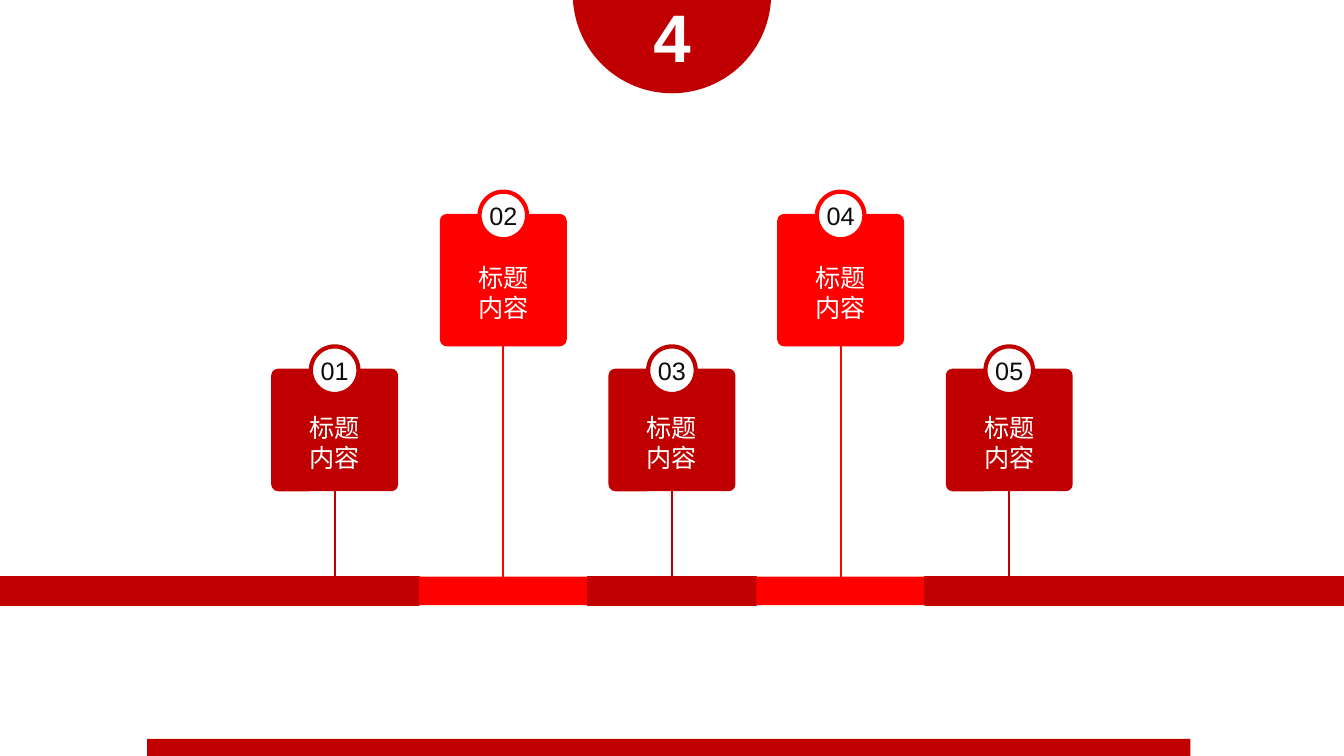
from dataclasses import dataclass

from lxml.etree import SubElement
from pptx import Presentation
from pptx.dml.color import RGBColor
from pptx.enum.shapes import MSO_CONNECTOR, MSO_SHAPE
from pptx.enum.text import MSO_ANCHOR, PP_ALIGN
from pptx.oxml.ns import qn
from pptx.util import Cm, Pt


@dataclass(frozen=True)
class Theme:
    dark_red: RGBColor = RGBColor(0xC0, 0x00, 0x00)
    bright_red: RGBColor = RGBColor(0xFF, 0x00, 0x00)
    white: RGBColor = RGBColor(0xFF, 0xFF, 0xFF)
    ink: RGBColor = RGBColor(0x0D, 0x0D, 0x0D)
    latin_font: str = "Arial"
    chinese_font: str = "Noto Sans CJK SC"
    body_size: Pt = Pt(18)
    chapter_size: Pt = Pt(48)
    ring_width: Pt = Pt(3)
    stem_width: Pt = Pt(1.5)
    bar_line_width: Pt = Pt(1)


THEME = Theme()

# Timeline geometry in centimetres
SLIDE_WIDTH, SLIDE_HEIGHT = 33.87, 19.05
CENTER = SLIDE_WIDTH / 2
PITCH = 4.25
BAR_TOP, BAR_HEIGHT = 14.53, 0.72
CARD_WIDTH, BADGE_SIZE = 3.2, 1.2
LABEL_WIDTH, LABEL_HEIGHT = 2.14, 1.8


@dataclass(frozen=True)
class Level:
    color: RGBColor
    card_top: float
    card_height: float
    label_top: float


LOW = Level(THEME.dark_red, 9.29, 3.09, 10.26)
HIGH = Level(THEME.bright_red, 5.39, 3.34, 6.48)
STEPS = [("01", LOW), ("02", HIGH), ("03", LOW), ("04", HIGH), ("05", LOW)]


def apply_format(target, values):
    for name, value in values.items():
        setattr(target, name, value)


def add_figure(slide, kind, left, top, width, height, fill, line=None, line_width=None):
    shape = slide.shapes.add_shape(kind, Cm(left), Cm(top), Cm(width), Cm(height))
    shape.shadow.inherit = False
    shape.fill.solid()
    shape.fill.fore_color.rgb = fill
    if line is None:
        shape.line.fill.background()
    else:
        shape.line.color.rgb = line
        shape.line.width = line_width
    return shape


def write_text(shape, text, color, frame_format, font_format):
    apply_format(shape.text_frame, frame_format)
    paragraph = shape.text_frame.paragraphs[0]
    paragraph.alignment = PP_ALIGN.CENTER
    run = paragraph.add_run()
    run.text = text
    run.font.color.rgb = color
    apply_format(run.font, font_format)
    east_asian = SubElement(run.font._element, qn("a:ea"))
    east_asian.set("typeface", font_format["name"])


def add_label(slide, text, left, top, width, height, font_format, wrap=True):
    box = slide.shapes.add_textbox(Cm(left), Cm(top), Cm(width), Cm(height))
    write_text(box, text, THEME.white, {"word_wrap": wrap}, font_format)


def add_stem(slide, center, top, color):
    stem = slide.shapes.add_connector(
        MSO_CONNECTOR.STRAIGHT, Cm(center), Cm(top), Cm(center), Cm(BAR_TOP))
    stem.line.color.rgb = color
    stem.line.width = THEME.stem_width
    SubElement(stem._element.spPr, qn("a:effectLst"))


def add_bar_segment(slide, left, right, color):
    outline = color if color == THEME.dark_red else None
    add_figure(slide, MSO_SHAPE.RECTANGLE, left, BAR_TOP, right - left, BAR_HEIGHT,
               color, outline, THEME.bar_line_width)


def add_step(slide, number, center, level):
    # Card and stem
    card = add_figure(slide, MSO_SHAPE.ROUNDED_RECTANGLE, center - CARD_WIDTH / 2,
                      level.card_top, CARD_WIDTH, level.card_height, level.color)
    card.adjustments[0] = 0.056
    add_stem(slide, center, level.card_top + level.card_height, level.color)

    # Numbered badge
    badge = add_figure(slide, MSO_SHAPE.OVAL, center - BADGE_SIZE / 2,
                       level.card_top - 0.56, BADGE_SIZE, BADGE_SIZE,
                       THEME.white, level.color, THEME.ring_width)
    margins = {f"margin_{side}": 0 for side in ("left", "top", "right", "bottom")}
    write_text(badge, number, THEME.ink,
               {**margins, "vertical_anchor": MSO_ANCHOR.MIDDLE},
               {"name": THEME.latin_font, "size": THEME.body_size})

    # Caption
    add_label(slide, "标题内容", center - LABEL_WIDTH / 2, level.label_top,
              LABEL_WIDTH, LABEL_HEIGHT,
              {"name": THEME.chinese_font, "size": THEME.body_size})


def add_timeline(slide):
    middle = len(STEPS) // 2
    last = len(STEPS) - 1
    for index, (number, level) in enumerate(STEPS):
        center = CENTER + (index - middle) * PITCH
        left = 0 if index == 0 else center - PITCH / 2
        right = SLIDE_WIDTH if index == last else center + PITCH / 2
        add_bar_segment(slide, left, right, level.color)
        add_step(slide, number, center, level)


def add_chapter_mark(slide):
    diameter = 5.0
    add_figure(slide, MSO_SHAPE.OVAL, CENTER - diameter / 2, -2.65,
               diameter, diameter, THEME.dark_red)
    add_label(slide, "4", CENTER - 0.74, -0.25, 1.48, 2.31,
              {"name": THEME.latin_font, "size": THEME.chapter_size, "bold": True},
              wrap=False)


def main():
    presentation = Presentation()
    presentation.slide_width = Cm(SLIDE_WIDTH)
    presentation.slide_height = Cm(SLIDE_HEIGHT)
    slide = presentation.slides.add_slide(presentation.slide_layouts[6])

    add_timeline(slide)
    add_chapter_mark(slide)
    # Footer strip
    add_figure(slide, MSO_SHAPE.RECTANGLE, 3.71, 18.62, 26.29, 0.43, THEME.dark_red)

    presentation.save("out.pptx")


if __name__ == "__main__":
    main()
